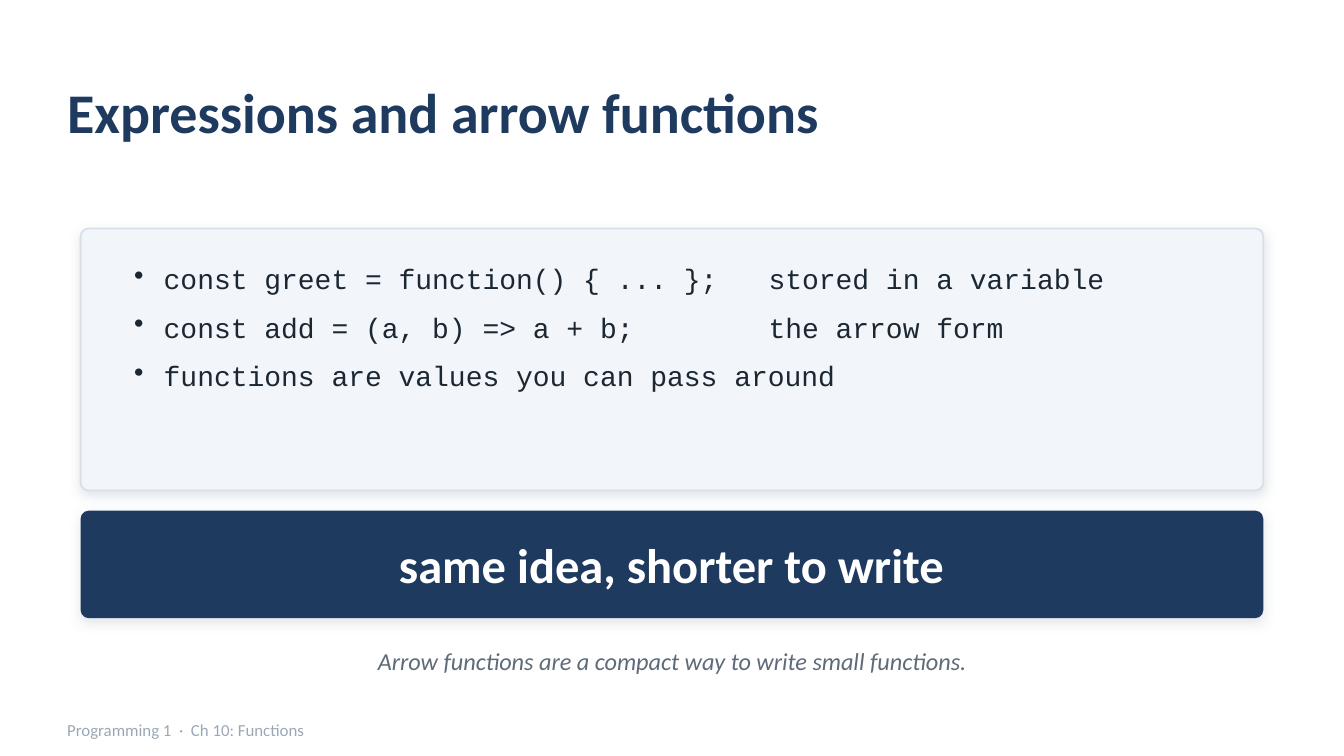
from lxml import etree
from pptx import Presentation, util as u
from pptx.dml.color import RGBColor
from pptx.enum import shapes, text
from pptx.oxml import ns

NAVY = RGBColor(0x1F, 0x3A, 0x5F)
PANEL = RGBColor(0xF2, 0xF5, 0xF9)
BORDER = RGBColor(0xD8, 0xE0, 0xE9)
INK = RGBColor(0x1B, 0x27, 0x33)
GREY = RGBColor(0x5E, 0x6B, 0x79)
MIST = RGBColor(0x9A, 0xA8, 0xB6)
WHITE = RGBColor(0xFF, 0xFF, 0xFF)

prs = Presentation()
prs.slide_width = u.Inches(10)
prs.slide_height = prs.slide_width * 9 // 16
s = prs.slides.add_slide(prs.slide_layouts[6])

# Square grid, 100 columns across the slide
CELL = prs.slide_width / 100
LEFT, WIDE = 6, 88
LEFT_ALIGN, CENTER = text.PP_ALIGN.LEFT, text.PP_ALIGN.CENTER


def grid(*cells):
    return [round(c * CELL) for c in cells]


def add_run(p, words, font, size, color, bold=False, italic=False):
    r = p.add_run()
    r.text = words
    r.font.name, r.font.size = font, u.Pt(size)
    r.font.bold, r.font.italic = bold, italic
    r.font.color.rgb = color


# Code panel and banner, both with a soft shadow
for top, height, fill, line in ((17, 19.5, PANEL, BORDER), (38, 8, NAVY, None)):
    sp = s.shapes.add_shape(shapes.MSO_SHAPE.ROUNDED_RECTANGLE,
                            *grid(LEFT, top, WIDE, height))
    sp.adjustments[0] = 0.6 / height
    sp.fill.solid()
    sp.fill.fore_color.rgb = fill
    if line is None:
        sp.line.fill.background()
    else:
        sp.line.color.rgb = line
        sp.line.width = u.Pt(1)
    sp.shadow.inherit = False
    effects = sp._element.spPr.find(ns.qn("a:effectLst"))
    shadow = etree.SubElement(effects, ns.qn("a:outerShdw"), blurRad=str(u.Pt(6)),
                              dist=str(u.Pt(2)), dir="5400000", rotWithShape="0")
    tint = etree.SubElement(shadow, ns.qn("a:srgbClr"), val=str(MIST))
    etree.SubElement(tint, ns.qn("a:alpha"), val="28000")

# Title, banner text, caption and footer
for box, words, size, color, bold, italic, align in (
    ((5, 4, 90, 8.5), "Expressions and arrow functions",
     30, NAVY, True, False, LEFT_ALIGN),
    ((LEFT, 38.3, WIDE, 7.4), "same idea, shorter to write",
     26, WHITE, True, False, CENTER),
    ((LEFT, 47.2, WIDE, 4), "Arrow functions are a compact way to write small functions.",
     13, GREY, False, True, CENTER),
    ((5, 53, 80, 2.6), "Programming 1  ·  Ch 10: Functions",
     9, MIST, False, False, LEFT_ALIGN),
):
    tf = s.shapes.add_textbox(*grid(*box)).text_frame
    tf.word_wrap = True
    tf.vertical_anchor = text.MSO_ANCHOR.MIDDLE
    tf.margin_left = tf.margin_right = tf.margin_top = tf.margin_bottom = 0
    p = tf.paragraphs[0]
    p.alignment = align
    add_run(p, words, "Calibri", size, color, bold, italic)

# Code bullets, with the remarks lined up on a tab stop
tf = s.shapes.add_textbox(*grid(9, 19, 82, 16)).text_frame
tf.word_wrap = True
INDENT, REMARK = grid(2.2, 47.2)
for i, words in enumerate((
    "const greet = function() { ... };\tstored in a variable",
    "const add = (a, b) => a + b;\tthe arrow form",
    "functions are values you can pass around",
)):
    p = tf.add_paragraph() if i else tf.paragraphs[0]
    p.space_after = u.Pt(8)
    pPr = p._p.get_or_add_pPr()
    pPr.set("marL", str(INDENT))
    pPr.set("indent", str(-INDENT))
    etree.SubElement(pPr, ns.qn("a:buChar"), char="•")
    tabs = etree.SubElement(pPr, ns.qn("a:tabLst"))
    etree.SubElement(tabs, ns.qn("a:tab"), pos=str(REMARK), algn="l")
    add_run(p, words, "Courier New", 15, INK)

prs.save("out.pptx")
